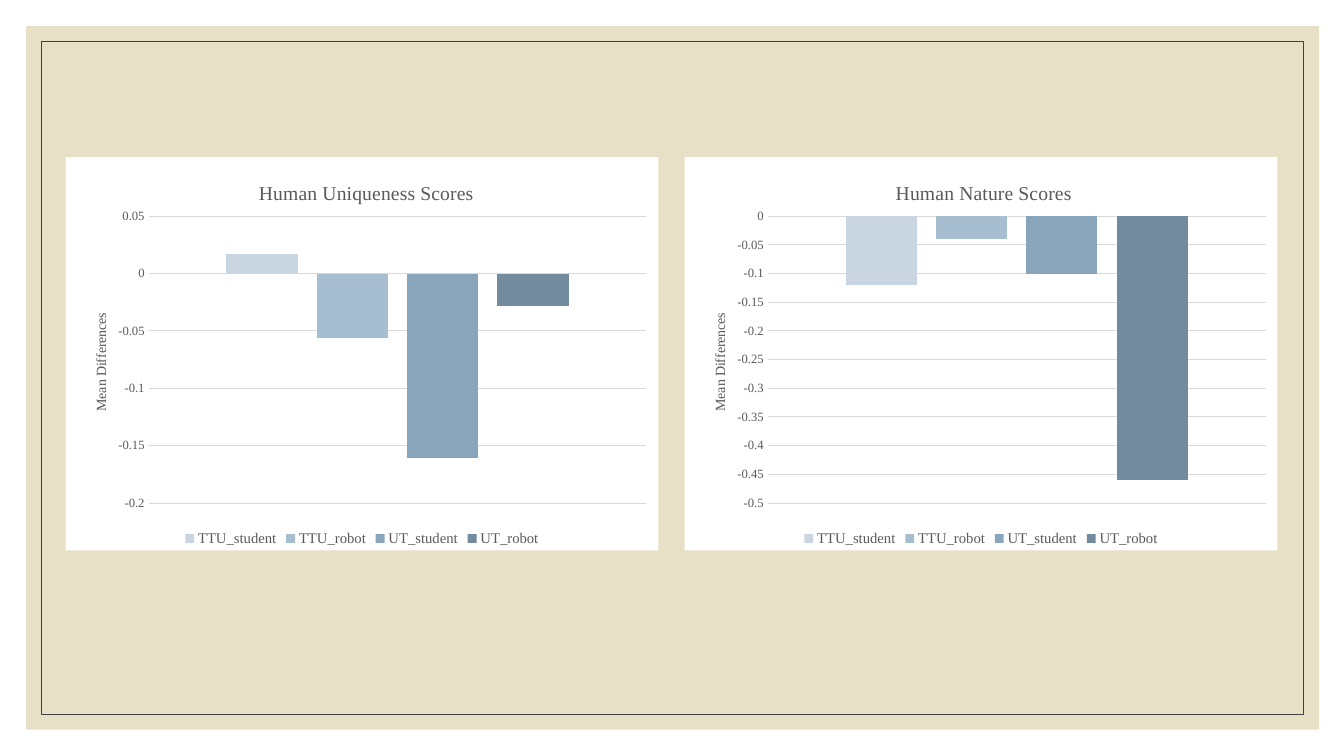
from dataclasses import dataclass

from lxml.etree import _Element
from pptx import Presentation
from pptx.chart.chart import Chart
from pptx.chart.data import CategoryChartData
from pptx.dml.color import RGBColor
from pptx.enum.chart import XL_CHART_TYPE, XL_LEGEND_POSITION, XL_TICK_MARK
from pptx.enum.shapes import MSO_SHAPE
from pptx.oxml import parse_xml
from pptx.oxml.ns import nsdecls, qn
from pptx.slide import Slide
from pptx.text.text import Font, TextFrame
from pptx.util import Inches, Pt


@dataclass(frozen=True)
class Theme:
    font: str = "Times New Roman"
    sand: str = "E7E0C7"
    frame: str = "404040"
    panel: str = "FFFFFF"
    text: str = "595959"
    grid: str = "D9D9D9"
    bars: tuple[str, ...] = ("C9D6E1", "A7BED1", "89A5BB", "738B9E")
    title: float = 14
    label: float = 10
    tick: float = 9
    legend: float = 10.5


@dataclass(frozen=True)
class Panel:
    title: str
    left: float
    title_x: float
    scores: tuple[float, ...]
    low: float
    high: float


THEME = Theme()
GROUPS = ("TTU_student", "TTU_robot", "UT_student", "UT_robot")
PANELS = (
    Panel("Human Uniqueness Scores", 0.65, 0.32,
          (0.017, -0.056, -0.161, -0.028), -0.2, 0.05),
    Panel("Human Nature Scores", 6.79, 0.35,
          (-0.12, -0.04, -0.1, -0.46), -0.5, 0),
)


def style(font: Font, size: float) -> None:
    font.name = THEME.font
    font.size = Pt(size)
    font.bold = False
    font.color.rgb = RGBColor.from_string(THEME.text)


def write(frame: TextFrame, text: str, size: float) -> None:
    run = frame.paragraphs[0].add_run()
    run.text = text
    style(run.font, size)


def place(part: _Element, index: int, x: float, y: float,
          size: tuple[float, float] | None = None) -> None:
    """Give a chart part a fixed position, as shares of the chart area."""
    for old in part.findall(qn("c:layout")):
        part.remove(old)
    tags = '<c:xMode val="edge"/><c:yMode val="edge"/>'
    ends = f'<c:x val="{x}"/><c:y val="{y}"/>'
    if size:
        tags = '<c:layoutTarget val="inner"/>' + tags
        ends += f'<c:w val="{size[0]}"/><c:h val="{size[1]}"/>'
    part.insert(index, parse_xml(
        f'<c:layout {nsdecls("c")}><c:manualLayout>{tags}{ends}'
        '</c:manualLayout></c:layout>'))


def add_frame(slide: Slide, inset: float, width: float, height: float,
              fill: str | None = None, line: str | None = None) -> None:
    box = slide.shapes.add_shape(MSO_SHAPE.RECTANGLE, Inches(inset), Inches(inset),
                                 Inches(width), Inches(height))
    box.shadow.inherit = False
    if fill:
        box.fill.solid()
        box.fill.fore_color.rgb = RGBColor.from_string(fill)
    else:
        box.fill.background()
    if line:
        box.line.color.rgb = RGBColor.from_string(line)
        box.line.width = Pt(0.5)
    else:
        box.line.fill.background()


def set_axes(chart: Chart, panel: Panel) -> None:
    chart.category_axis.visible = False
    axis = chart.value_axis
    axis.minimum_scale, axis.maximum_scale = panel.low, panel.high
    axis.major_unit = 0.05
    axis.major_tick_mark = axis.minor_tick_mark = XL_TICK_MARK.NONE
    axis.format.line.fill.background()
    grid = axis.major_gridlines.format.line
    grid.color.rgb = RGBColor.from_string(THEME.grid)
    grid.width = Pt(0.75)
    style(axis.tick_labels.font, THEME.tick)
    axis.tick_labels.number_format = "General"
    axis.tick_labels.number_format_is_linked = False
    write(axis.axis_title.text_frame, "Mean Differences", THEME.label)
    place(axis.axis_title._element, 1, 0.04, 0.39)


def add_panel(slide: Slide, panel: Panel) -> None:
    data = CategoryChartData()
    data.categories = ["1"]
    for name, score in zip(GROUPS, panel.scores):
        data.add_series(name, [score])
    chart = slide.shapes.add_chart(
        XL_CHART_TYPE.COLUMN_CLUSTERED, Inches(panel.left), Inches(1.56),
        Inches(5.88), Inches(3.9), data).chart
    style(chart.font, THEME.label)

    # White chart area
    chart._chartSpace.find(qn("c:chart")).addnext(parse_xml(
        f'<c:spPr {nsdecls("c", "a")}><a:solidFill><a:srgbClr val="{THEME.panel}"/>'
        '</a:solidFill><a:ln><a:noFill/></a:ln></c:spPr>'))

    # Title and legend
    chart.has_title = True
    write(chart.chart_title.text_frame, panel.title, THEME.title)
    place(chart.chart_title._element, 1, panel.title_x, 0.05)
    chart.has_legend = True
    chart.legend.position = XL_LEGEND_POSITION.BOTTOM
    chart.legend.include_in_layout = False
    style(chart.legend.font, THEME.legend)

    # Bars
    plot = chart.plots[0]
    plot.gap_width, plot.overlap = 219, -27
    plot.vary_by_categories = False
    for bar, color in zip(plot.series, THEME.bars):
        bar.invert_if_negative = False
        bar.format.fill.solid()
        bar.format.fill.fore_color.rgb = RGBColor.from_string(color)

    set_axes(chart, panel)
    area = chart._chartSpace.find(qn("c:chart")).find(qn("c:plotArea"))
    place(area, 0, 0.14, 0.15, (0.84, 0.73))


def main() -> None:
    deck = Presentation()
    deck.slide_width, deck.slide_height = Inches(13.33), Inches(7.5)
    slide = deck.slides.add_slide(deck.slide_layouts[6])

    # Sand backdrop with a thin inner frame
    add_frame(slide, 0.26, 12.82, 6.98, fill=THEME.sand)
    add_frame(slide, 0.41, 12.52, 6.68, line=THEME.frame)

    # Score charts
    for panel in PANELS:
        add_panel(slide, panel)
    deck.save("out.pptx")


if __name__ == "__main__":
    main()
